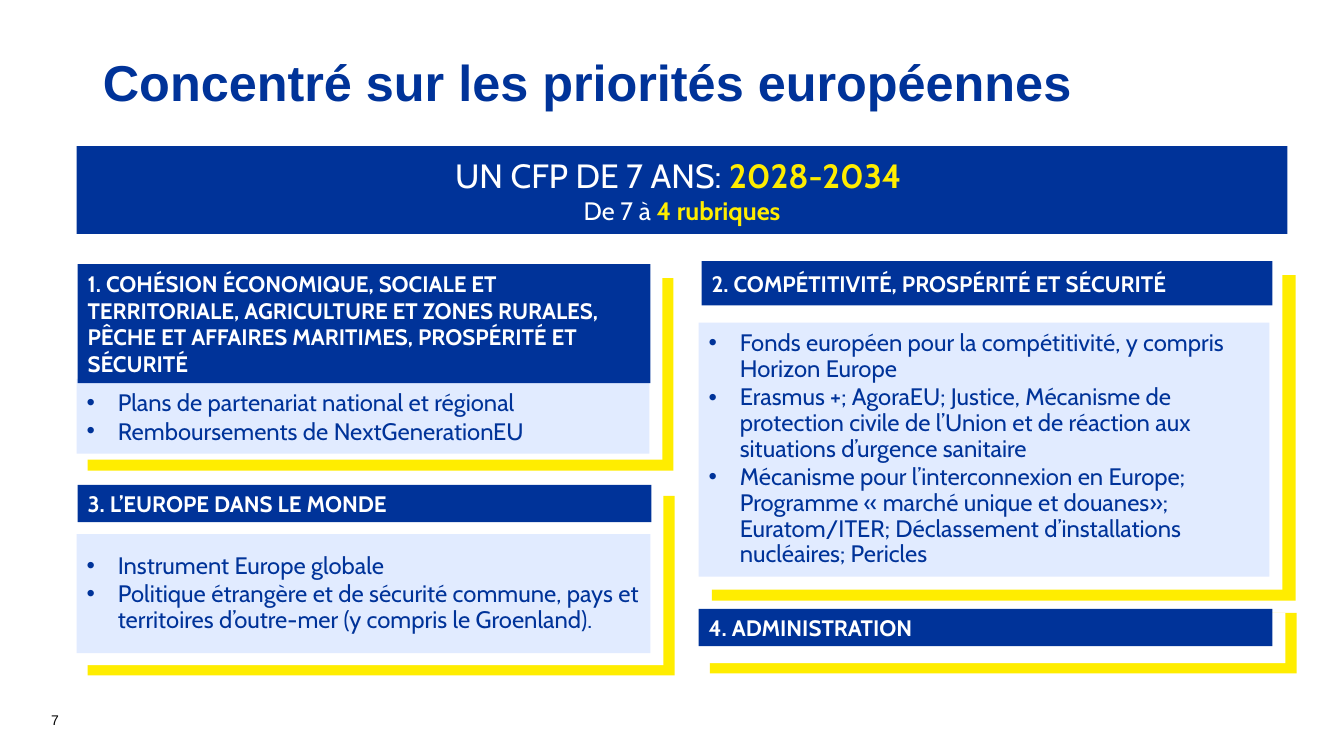
from lxml import etree
from pptx import Presentation
from pptx.dml.color import RGBColor
from pptx.enum import shapes, text
from pptx.oxml import ns
from pptx.util import Inches, Pt

BLUE, YELLOW, PALE, WHITE, BLACK = "003399", "FFED00", "E1EBFF", "FFFFFF", "000000"

PANELS = [
    {
        "heading": "1. COHÉSION ÉCONOMIQUE, SOCIALE ET TERRITORIALE,\u00a0AGRICULTURE ET ZONES RURALES, "
                   "PÊCHE ET AFFAIRES MARITIMES, PROSPÉRITÉ ET SÉCURITÉ",
        "yellow": (0.87, 2.76, 5.81, 1.91),
        "white": (0.76, 2.59, 5.81, 1.97),
        "body": (0.76, 3.76, 5.68, 0.74),
        "header": (0.77, 2.62, 5.68, 1.18),
        "spacing": (1.0, 0),
        "items": ["Plans de partenariat national et régional",
                  "Remboursements de NextGenerationEU"],
    },
    {
        "heading": "3. L’EUROPE DANS LE MONDE",
        "yellow": (0.87, 4.92, 5.82, 1.78),
        "white": (0.76, 4.81, 5.82, 1.79),
        "body": (0.76, 5.3, 5.69, 1.18),
        "header": (0.77, 4.81, 5.69, 0.37),
        "spacing": (0.9, 2),
        "items": ["Instrument Europe globale",
                  "Politique étrangère et de sécurité commune, pays et territoires d’outre-mer "
                  "(y compris le Groenland)."],
    },
    {
        "heading": "2. COMPÉTITIVITÉ, PROSPÉRITÉ ET SÉCURITÉ",
        "yellow": (7.06, 2.73, 5.79, 3.23),
        "white": (6.95, 2.67, 5.77, 3.18),
        "body": (6.93, 3.2, 5.66, 2.52),
        "header": (6.96, 2.59, 5.66, 0.44),
        "spacing": (0.9, 2),
        "items": ["Fonds européen pour la compétitivité, y compris Horizon Europe",
                  "Erasmus +; AgoraEU; Justice, Mécanisme de protection civile de l’Union et de "
                  "réaction aux situations d’urgence sanitaire",
                  "Mécanisme pour l’interconnexion en Europe; Programme «\u00a0marché unique et "
                  "douanes»; Euratom/ITER; Déclassement d’installations nucléaires; Pericles"],
    },
    {
        "heading": "4. ADMINISTRATION",
        "yellow": (7.04, 6.08, 5.82, 0.6),
        "white": (6.93, 6.08, 5.82, 0.5),
        "header": (6.93, 6.04, 5.69, 0.37),
        "items": [],
    },
]


def color(value):
    return RGBColor.from_string(value)


def style(font, name, size, value, bold=False):
    font.name = name
    font.size = Pt(size)
    font.bold = bold
    font.color.rgb = color(value)


def add_block(page, place, fill):
    box = page.shapes.add_shape(shapes.MSO_SHAPE.RECTANGLE, *map(Inches, place))
    box.shadow.inherit = False
    box.fill.solid()
    box.fill.fore_color.rgb = color(fill)
    box.line.fill.background()
    box.text_frame.word_wrap = True
    box.text_frame.vertical_anchor = text.MSO_ANCHOR.MIDDLE
    return box


def add_bullet(para):
    props = para._p.get_or_add_pPr()
    props.set("marL", str(Inches(0.31)))
    props.set("indent", str(Inches(-0.31)))
    bullet_color = etree.SubElement(props, ns.qn("a:buClr"))
    etree.SubElement(bullet_color, ns.qn("a:srgbClr"), val=BLUE)
    etree.SubElement(props, ns.qn("a:buFont"), typeface="Arial")
    etree.SubElement(props, ns.qn("a:buChar"), char="•")


def add_items(page, place, items, spacing):
    frame = add_block(page, place, PALE).text_frame
    frame.margin_top = frame.margin_bottom = 0
    frame.text = "\n".join(items)
    for para in frame.paragraphs:
        add_bullet(para)
        para.alignment = text.PP_ALIGN.LEFT
        para.line_spacing = spacing[0]
        para.space_after = Pt(spacing[1])
        style(para.font, "Cabin", 17, BLUE)


def add_panel(page, panel):
    add_block(page, panel["yellow"], YELLOW)
    add_block(page, panel["white"], WHITE)
    if panel["items"]:
        add_items(page, panel["body"], panel["items"], panel["spacing"])
    header = add_block(page, panel["header"], BLUE)
    para = header.text_frame.paragraphs[0]
    para.text = panel["heading"]
    para.alignment = text.PP_ALIGN.LEFT
    style(para.font, "Cabin", 16, WHITE, True)


def add_banner(page):
    frame = add_block(page, (0.76, 1.45, 12.01, 0.87), BLUE).text_frame
    lines = [("UN CFP DE 7\u00a0ANS: ", "2028-2034 ", 24), ("De 7 à ", "4 rubriques", 18)]
    for index, (plain, strong, size) in enumerate(lines):
        para = frame.add_paragraph() if index else frame.paragraphs[0]
        para.alignment = text.PP_ALIGN.CENTER
        for words, value, bold in ((plain, WHITE, False), (strong, YELLOW, True)):
            span = para.add_run()
            span.text = words
            style(span.font, "Cabin", size, value, bold)


def set_title(page, words):
    title = page.shapes.title
    title.left, title.top, title.width, title.height = map(Inches, (0.92, 0.4, 11.9, 0.89))
    title.text_frame.vertical_anchor = text.MSO_ANCHOR.MIDDLE
    para = title.text_frame.paragraphs[0]
    para.text = words
    para.alignment = text.PP_ALIGN.LEFT
    para.line_spacing = 0.9
    style(para.font, "Arial", 36, BLUE, True)


def add_page_number(page, number):
    box = page.shapes.add_textbox(*map(Inches, (0.41, 6.87, 3, 0.4)))
    box.text_frame.word_wrap = True
    box.text_frame.vertical_anchor = text.MSO_ANCHOR.BOTTOM
    para = box.text_frame.paragraphs[0]
    para.text = number
    style(para.font, "Arial", 10, BLACK)


def main():
    deck = Presentation()
    deck.slide_width, deck.slide_height = Inches(13.33), Inches(7.5)
    page = deck.slides.add_slide(deck.slide_layouts.get_by_name("Title Only"))
    set_title(page, "Concentré sur les priorités européennes")
    for panel in PANELS:
        add_panel(page, panel)
    add_page_number(page, "7")
    add_banner(page)
    deck.save("out.pptx")


if __name__ == "__main__":
    main()
